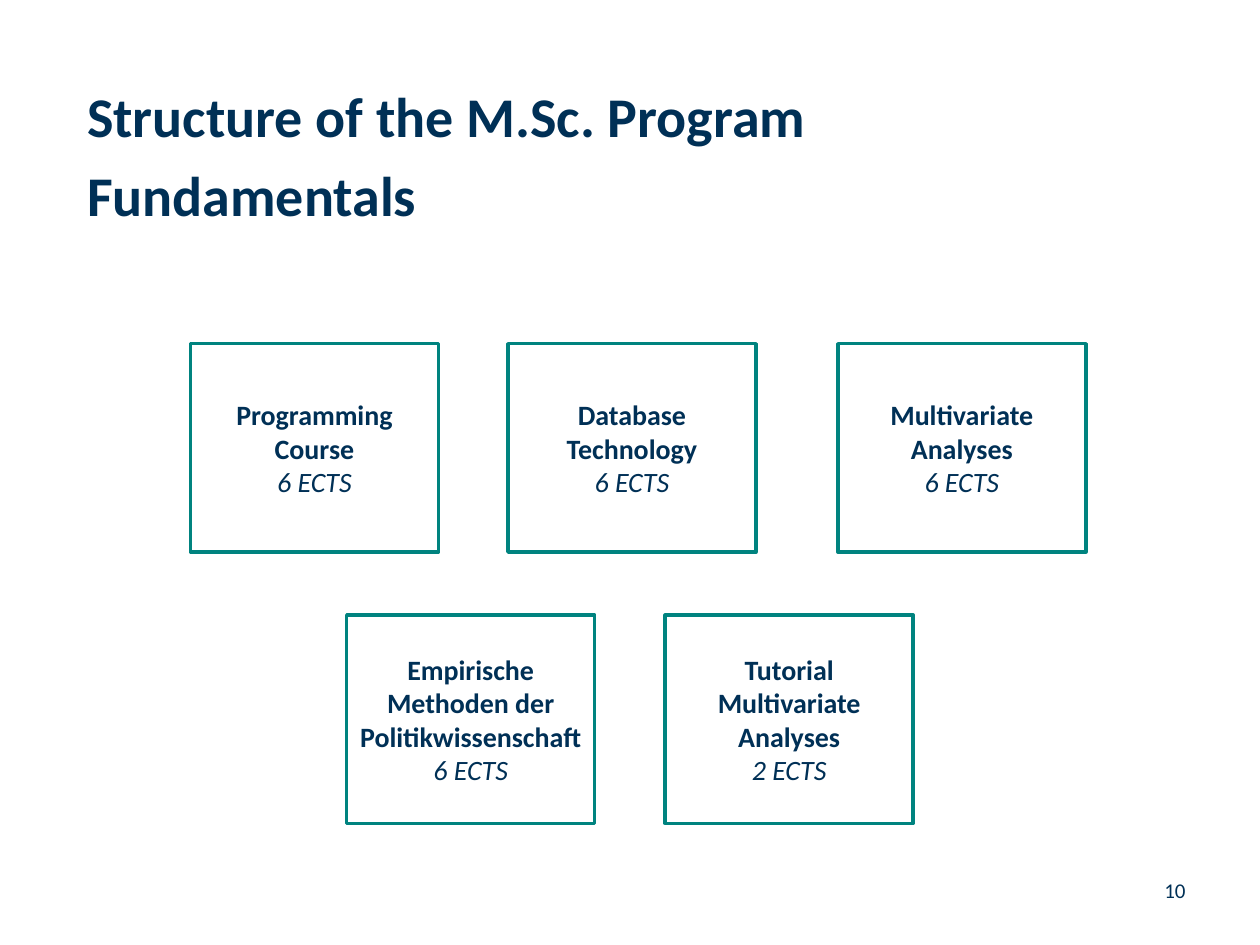
from pptx import Presentation
from pptx.dml.color import RGBColor
from pptx.enum.shapes import MSO_SHAPE
from pptx.enum.text import MSO_ANCHOR, MSO_AUTO_SIZE, PP_ALIGN
from pptx.util import Cm, Pt

RECT = MSO_SHAPE.RECTANGLE
TOP, MIDDLE = MSO_ANCHOR.TOP, MSO_ANCHOR.MIDDLE
LEFT, CENTER, RIGHT = PP_ALIGN.LEFT, PP_ALIGN.CENTER, PP_ALIGN.RIGHT

COLORS = {"navy": "003056", "teal": "00837F"}
FONT = "Calibri"
TITLE_LINES = ["Structure of the M.Sc. Program", "Fundamentals"]
PAGE_NUMBER = "10"

# Each row: top in cm, then (left in cm, course, credits)
COURSE_ROWS = [
    (6.93, [
        (3.84, "Programming Course", "6 ECTS"),
        (10.24, "Database Technology", "6 ECTS"),
        (16.89, "Multivariate Analyses", "6 ECTS"),
    ]),
    (12.4, [
        (6.99, "Empirische Methoden der Politikwissenschaft", "6 ECTS"),
        (13.41, "Tutorial Multivariate Analyses", "2 ECTS"),
    ]),
]
BOX_WIDTH, BOX_HEIGHT = Cm(5), Cm(4.2)


def add_line(tf, index, text, size, align, bold=False, italic=False):
    p = tf.paragraphs[0] if index == 0 else tf.add_paragraph()
    p.alignment = align
    r = p.add_run()
    r.text = text
    r.font.name = FONT
    r.font.size = Pt(size)
    r.font.bold = bold
    r.font.italic = italic
    r.font.color.rgb = RGBColor.from_string(COLORS["navy"])
    return p


def add_title(s):
    sp = s.shapes.title
    sp.left, sp.top, sp.width, sp.height = Cm(1.5), Cm(1.52), Cm(19), Cm(3.4)
    tf = sp.text_frame
    tf.word_wrap = True
    tf.auto_size = MSO_AUTO_SIZE.NONE
    tf.vertical_anchor = TOP
    for i, line in enumerate(TITLE_LINES):
        p = add_line(tf, i, line, 32, LEFT, bold=True)
        p.space_before = Pt(6.4 if i else 0)


def add_course(s, left, top, course, credits):
    sp = s.shapes.add_shape(RECT, left, top, BOX_WIDTH, BOX_HEIGHT)
    sp.shadow.inherit = False
    sp.fill.background()
    sp.line.color.rgb = RGBColor.from_string(COLORS["teal"])
    sp.line.width = Pt(2)
    tf = sp.text_frame
    tf.word_wrap = True
    tf.vertical_anchor = MIDDLE
    add_line(tf, 0, course, 16, CENTER, bold=True)
    add_line(tf, 1, credits, 16, CENTER, italic=True)


def add_page_number(s):
    sp = s.shapes.add_textbox(Cm(20.98), Cm(17.7), Cm(2.92), Cm(0.51))
    tf = sp.text_frame
    tf.word_wrap = True
    tf.margin_left = tf.margin_right = tf.margin_top = tf.margin_bottom = 0
    add_line(tf, 0, PAGE_NUMBER, 12, RIGHT)


def main():
    prs = Presentation()
    prs.slide_width, prs.slide_height = Cm(25.4), Cm(19.05)
    s = prs.slides.add_slide(prs.slide_layouts.get_by_name("Title Only"))
    add_title(s)
    for top, courses in COURSE_ROWS:
        for left, course, credits in courses:
            add_course(s, Cm(left), Cm(top), course, credits)
    add_page_number(s)
    prs.save("out.pptx")


if __name__ == "__main__":
    main()
